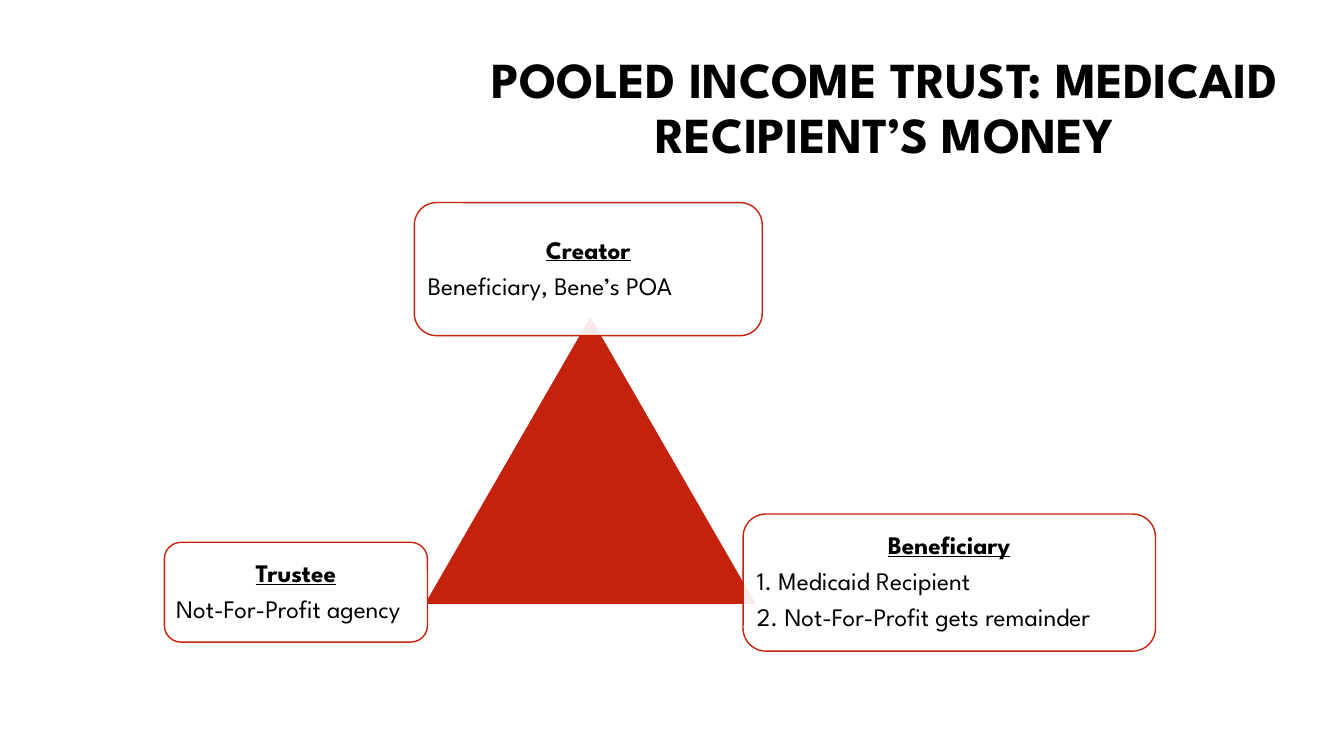
"""Build the pooled income trust slide: a triangle linking three parties."""
import pptx
import pptx.util
import pptx.dml.color
import pptx.enum.shapes
import pptx.enum.text
import pptx.oxml
import pptx.oxml.ns
from pptx.util import Inches

COLORS = {"red": "C4220D", "white": "FFFFFF", "black": "000000"}
FONT = "League Spartan"
SHAPE = pptx.enum.shapes.MSO_SHAPE
ALIGN = pptx.enum.text.PP_ALIGN
MIDDLE = pptx.enum.text.MSO_ANCHOR.MIDDLE


def add_filled(kind, box, fill, line):
    sp = s.shapes.add_shape(kind, *[Inches(v) for v in box])
    sp.shadow.inherit = False
    sp.fill.solid()
    sp.fill.fore_color.rgb = pptx.dml.color.RGBColor.from_string(COLORS[fill])
    sp.line.color.rgb = pptx.dml.color.RGBColor.from_string(COLORS[line])
    sp.line.width = pptx.util.Pt(1)
    return sp


def format_paragraph(p, size, align, heading):
    p.alignment = align
    p.line_spacing = 0.9
    p.font.name = FONT
    p.font.size = pptx.util.Pt(size)
    p.font.bold = heading
    p.font.color.rgb = pptx.dml.color.RGBColor.from_string(COLORS["black"])


prs = pptx.Presentation()
prs.slide_width, prs.slide_height = Inches(13.33), Inches(7.5)
s = prs.slides.add_slide(prs.slide_layouts[5])

title = s.shapes.title
title.left, title.top = Inches(4.63), Inches(0.55)
title.width, title.height = Inches(8.29), Inches(1.08)
tf = title.text_frame
tf.text = "POOLED INCOME TRUST: MEDICAID RECIPIENT’S MONEY"
tf.word_wrap = True
tf.auto_size = pptx.enum.text.MSO_AUTO_SIZE.NONE
tf.vertical_anchor = MIDDLE
format_paragraph(tf.paragraphs[0], 36, ALIGN.CENTER, True)

add_filled(SHAPE.ISOSCELES_TRIANGLE, (4.2, 3.13, 3.31, 2.87), "red", "white")

parties = [
    ((4.11, 2.01, 3.45, 1.32), "Creator", ["Beneficiary, Bene’s POA"]),
    ((7.37, 5.1, 4.09, 1.36), "Beneficiary",
     ["1. Medicaid Recipient", "2. Not-For-Profit gets remainder"]),
    ((1.63, 5.38, 2.61, 0.99), "Trustee", ["Not-For-Profit agency"]),
]
for box, role, members in parties:
    sp = add_filled(SHAPE.ROUNDED_RECTANGLE, box, "white", "red")
    color = sp.fill._xPr.find(".//" + pptx.oxml.ns.qn("a:srgbClr"))
    color.append(pptx.oxml.parse_xml(
        f'<a:alpha {pptx.oxml.ns.nsdecls("a")} val="90000"/>'))
    tf = sp.text_frame
    tf.word_wrap = True
    tf.vertical_anchor = MIDDLE
    tf.margin_left = tf.margin_right = Inches(0.07)
    tf.margin_top = tf.margin_bottom = Inches(0.07)
    tf.text = "\n".join([role] + members)
    for i, p in enumerate(tf.paragraphs):
        heading = i == 0
        format_paragraph(p, 18, ALIGN.CENTER if heading else ALIGN.LEFT, heading)
        p.font.underline = heading
        p.space_after = pptx.util.Pt(6.3)

prs.save("out.pptx")
